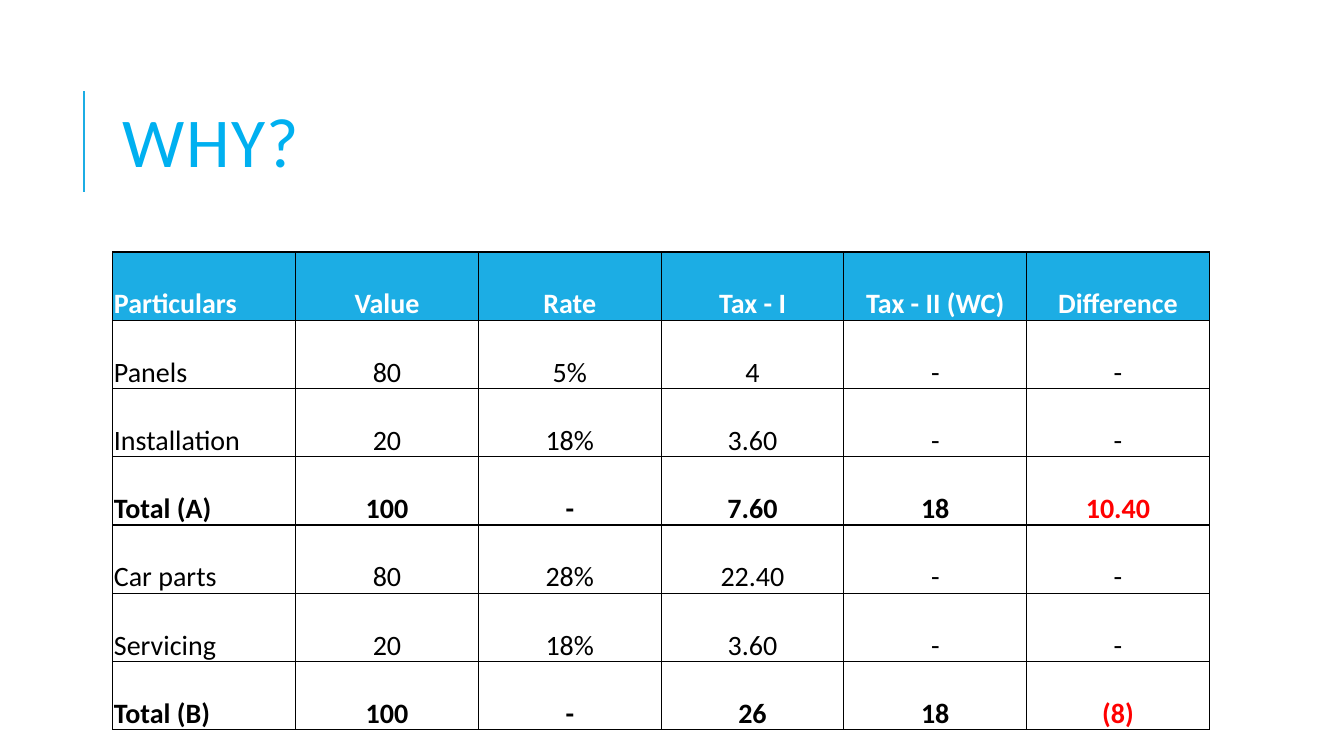
"""Build a slide that compares two tax treatments in a table."""
import pptx
import pptx.dml.color
import pptx.enum.shapes
import pptx.enum.text
import pptx.oxml
import pptx.oxml.ns
import pptx.util

Pt = pptx.util.Pt
ANCHOR = pptx.enum.text.MSO_ANCHOR
ALIGN = pptx.enum.text.PP_ALIGN

TITLE = "WHY?"
ROWS = [
    ("Particulars", "Value", "Rate", "Tax - I", "Tax - II (WC)", "Difference"),
    ("Panels", "80", "5%", "4", "-", "-"),
    ("Installation", "20", "18%", "3.60", "-", "-"),
    ("Total (A)", "100", "-", "7.60", "18", "10.40"),
    ("Car parts", "80", "28%", "22.40", "-", "-"),
    ("Servicing", "20", "18%", "3.60", "-", "-"),
    ("Total (B)", "100", "-", "26", "18", "(8)"),
]
FONT = "Calibri"
BLUE, TITLE_BLUE = "1CADE4", "00B0F0"
BLACK, WHITE, RED = "000000", "FFFFFF", "FF0000"
LEFT, TABLE_TOP, COL_W, ROW_H = 80.64, 180, 130.56, 40.94
RULE_X, RULE_TOP, RULE_BOTTOM = 60, 64.8, 136.8


def rgb(value):
    return pptx.dml.color.RGBColor.from_string(value)


def style_run(r, size, color, bold=False):
    r.font.name = FONT
    r.font.size = Pt(size)
    r.font.bold = bold
    r.font.color.rgb = rgb(color)


def add_borders(cell):
    tcPr = cell._tc.get_or_add_tcPr()
    for side in "LRTB":
        tcPr.append(pptx.oxml.parse_xml(
            f'<a:ln{side} {pptx.oxml.ns.nsdecls("a")} w="{Pt(1)}"><a:solidFill>'
            f'<a:srgbClr val="{BLACK}"/></a:solidFill></a:ln{side}>'))


def fill_cell(cell, text, row, col):
    header = row == 0
    total = ROWS[row][0].startswith("Total")
    add_borders(cell)
    if header:
        cell.fill.solid()
        cell.fill.fore_color.rgb = rgb(BLUE)
    else:
        cell.fill.background()
    cell.margin_left = cell.margin_right = cell.margin_top = Pt(0.72)
    cell.margin_bottom = 0
    cell.vertical_anchor = ANCHOR.BOTTOM
    p = cell.text_frame.paragraphs[0]
    p.text = text
    p.line_spacing = 2.0
    p.alignment = ALIGN.CENTER if col else ALIGN.LEFT
    last = col == len(ROWS[row]) - 1
    color = WHITE if header else RED if total and last else BLACK
    style_run(p.runs[0], 20, color, header or total)


def add_title(s):
    rule = s.shapes.add_connector(
        pptx.enum.shapes.MSO_CONNECTOR.STRAIGHT,
        Pt(RULE_X), Pt(RULE_BOTTOM), Pt(RULE_X), Pt(RULE_TOP))
    rule.line.color.rgb = rgb(BLUE)
    rule.line.width = Pt(1.5)
    rule._element.spPr.append(pptx.oxml.parse_xml(
        f'<a:effectLst {pptx.oxml.ns.nsdecls("a")}/>'))
    sp = s.shapes.add_textbox(Pt(LEFT), Pt(46), Pt(765.36), Pt(118))
    tf = sp.text_frame
    tf.word_wrap = True
    tf.vertical_anchor = ANCHOR.MIDDLE
    p = tf.paragraphs[0]
    p.text = TITLE
    p.line_spacing = 0.8
    r = p.runs[0]
    style_run(r, 50, TITLE_BLUE)
    r.font._element.set("spc", "100")


def add_tax_table(s):
    n_rows, n_cols = len(ROWS), len(ROWS[0])
    table = s.shapes.add_table(
        n_rows, n_cols, Pt(LEFT), Pt(TABLE_TOP),
        Pt(COL_W * n_cols), Pt(ROW_H * n_rows)).table
    table.horz_banding = False
    for column in table.columns:
        column.width = Pt(COL_W)
    for i, values in enumerate(ROWS):
        table.rows[i].height = Pt(ROW_H)
        for j, text in enumerate(values):
            fill_cell(table.cell(i, j), text, i, j)


def main():
    prs = pptx.Presentation()
    prs.slide_width, prs.slide_height = Pt(960), Pt(540)
    s = prs.slides.add_slide(prs.slide_layouts[6])
    add_title(s)
    add_tax_table(s)
    prs.save("out.pptx")


if __name__ == "__main__":
    main()
